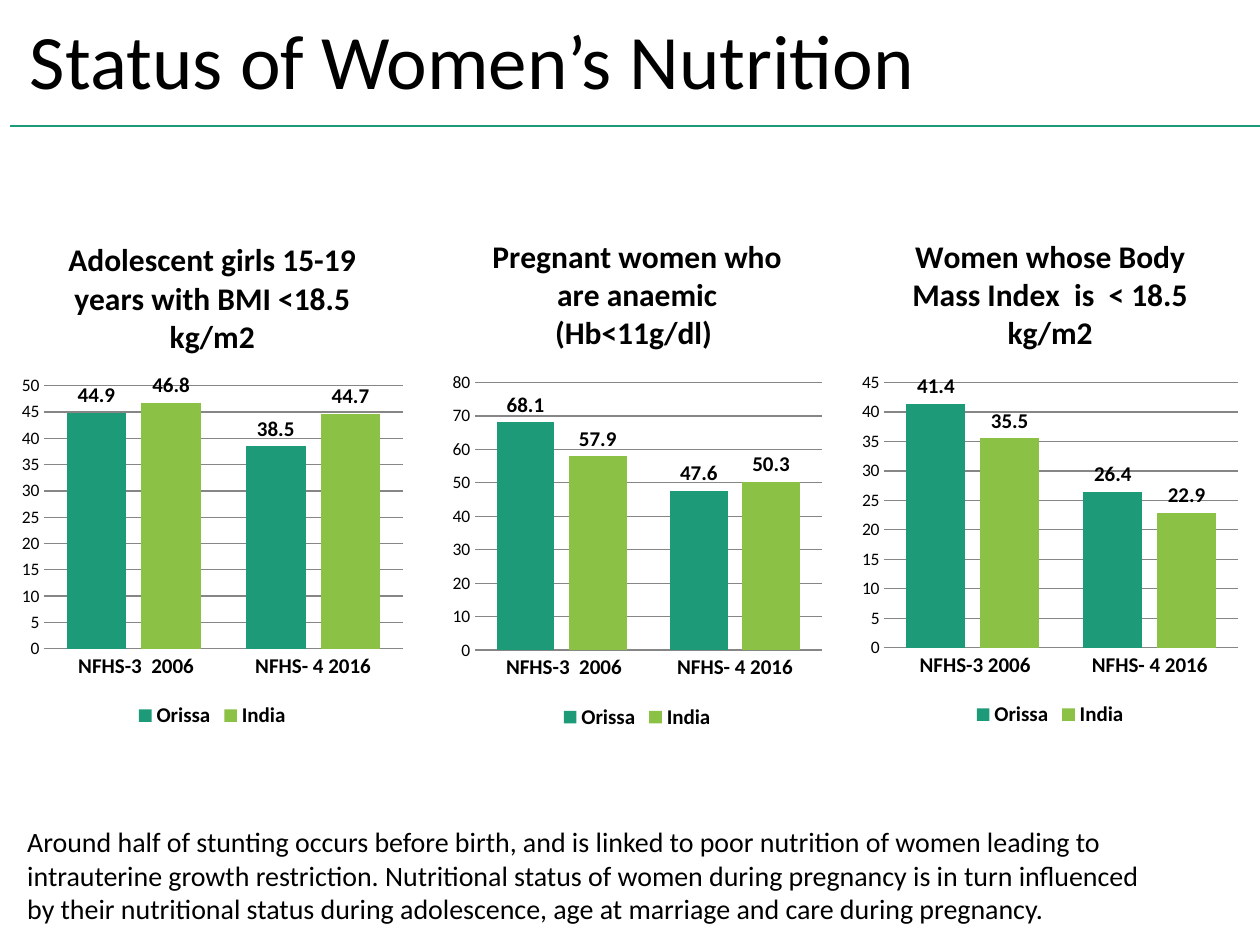
from dataclasses import dataclass

from lxml import etree
from pptx import Presentation
from pptx.chart.data import CategoryChartData
from pptx.dml.color import RGBColor
from pptx.enum.chart import (XL_CHART_TYPE, XL_LABEL_POSITION,
                             XL_LEGEND_POSITION, XL_TICK_MARK)
from pptx.enum.shapes import MSO_CONNECTOR
from pptx.enum.text import MSO_ANCHOR, MSO_AUTO_SIZE, PP_ALIGN
from pptx.oxml.ns import qn
from pptx.util import Cm, Pt

COLUMN = XL_CHART_TYPE.COLUMN_CLUSTERED
BOTTOM = XL_LEGEND_POSITION.BOTTOM
ABOVE = XL_LABEL_POSITION.OUTSIDE_END
NO_TICK = XL_TICK_MARK.NONE
STRAIGHT = MSO_CONNECTOR.STRAIGHT
MIDDLE = MSO_ANCHOR.MIDDLE
LEFT = PP_ALIGN.LEFT
NO_FIT = MSO_AUTO_SIZE.NONE
GROW = MSO_AUTO_SIZE.SHAPE_TO_FIT_TEXT
TITLE_ONLY = 5


@dataclass
class Theme:
    face: str = "Calibri"
    ink: str = "000000"
    grid: str = "868686"
    teal: str = "1D9A78"
    lime: str = "8BC145"
    title: int = 44
    head: int = 18
    body: int = 16
    label: int = 12
    tick: int = 10


def style(font, theme, size, bold=False):
    font.name = theme.face
    font.size = Pt(size)
    font.bold = bold
    font.color.rgb = RGBColor.from_string(theme.ink)


def write(frame, text, theme, size, bold=False, align=None, space=None):
    """Put one formatted paragraph into a text frame."""
    para = frame.paragraphs[0]
    para.alignment = align
    para.line_spacing = space
    run = para.add_run()
    run.text = text
    style(run.font, theme, size, bold)


class Page:
    def __init__(self, slide, theme):
        self.slide = slide
        self.theme = theme

    def title(self, text, x, y, w, h):
        shape = self.slide.shapes.title
        shape.left, shape.top, shape.width, shape.height = map(Cm, (x, y, w, h))
        frame = shape.text_frame
        frame.auto_size = NO_FIT
        frame.vertical_anchor = MIDDLE
        write(frame, text, self.theme, self.theme.title, align=LEFT, space=0.9)

    def text(self, text, x, y, w, h):
        box = self.slide.shapes.add_textbox(*map(Cm, (x, y, w, h)))
        frame = box.text_frame
        frame.word_wrap = True
        frame.auto_size = GROW
        write(frame, text, self.theme, self.theme.body)

    def rule(self, x, y, end):
        line = self.slide.shapes.add_connector(
            STRAIGHT, Cm(x), Cm(y), Cm(end), Cm(y))
        line.line.color.rgb = RGBColor.from_string(self.theme.teal)
        line.line.width = Pt(1.5)
        etree.SubElement(line._element.spPr, qn("a:effectLst"))

    def chart(self, head, cats, series, x, y, w, h):
        theme = self.theme
        data = CategoryChartData(number_format="General")
        data.categories = cats
        for name, vals in series.items():
            data.add_series(name, vals)
        chart = self.slide.shapes.add_chart(
            COLUMN, *map(Cm, (x, y, w, h)), data).chart
        style(chart.font, theme, theme.tick)

        # Heading and legend
        chart.has_title = True
        write(chart.chart_title.text_frame, head, theme, theme.head, bold=True)
        chart.chart_title.include_in_layout = False
        chart.has_legend = True
        chart.legend.position = BOTTOM
        chart.legend.include_in_layout = False
        style(chart.legend.font, theme, theme.label, bold=True)

        # Axes
        for axis in (chart.category_axis, chart.value_axis):
            axis.major_tick_mark = axis.minor_tick_mark = NO_TICK
        grey = RGBColor.from_string(theme.grid)
        chart.category_axis.format.line.color.rgb = grey
        style(chart.category_axis.tick_labels.font, theme, theme.label, bold=True)
        value = chart.value_axis
        value.minimum_scale = 0
        value.format.line.fill.background()
        value.has_major_gridlines = True
        value.major_gridlines.format.line.color.rgb = grey
        style(value.tick_labels.font, theme, theme.tick)

        # Columns
        plot = chart.plots[0]
        plot.vary_by_categories = False
        plot.gap_width = 75
        plot.overlap = -25
        for bars, color in zip(plot.series, (theme.teal, theme.lime)):
            bars.format.fill.solid()
            bars.format.fill.fore_color.rgb = RGBColor.from_string(color)
            bars.invert_if_negative = False
            labels = bars.data_labels
            labels.show_value = True
            labels.position = ABOVE
            style(labels.font, theme, theme.label, bold=True)


# Heading, first survey, Orissa, India, place
CHARTS = [
    ("Adolescent girls 15-19 years with BMI <18.5 kg/m2", " NFHS-3  2006",
     (44.9, 38.5), (46.8, 44.7), (0.28, 4.34, 8, 10.44)),
    ("Pregnant women who are anaemic (Hb<11g/dl) ", " NFHS-3  2006",
     (68.1, 47.6), (57.9, 50.3), (8.97, 4.27, 7.75, 10.54)),
    ("Women whose Body Mass Index  is  < 18.5 kg/m2", " NFHS-3 2006",
     (41.4, 26.4), (35.5, 22.9), (17.22, 4.27, 7.9, 10.49)),
]


def main():
    deck = Presentation()
    deck.slide_width, deck.slide_height = Cm(25.4), Cm(19.05)
    page = Page(deck.slides.add_slide(deck.slide_layouts[TITLE_ONLY]), Theme())

    # Title, closing text and rule
    page.title(" Status of Women’s Nutrition", 0, 0.2, 22.86, 2.2)
    page.text(
        "Around half of stunting occurs before birth, and is linked to poor "
        "nutrition of women leading to intrauterine growth restriction. "
        "Nutritional status of women during pregnancy is in turn influenced "
        "by their nutritional status during adolescence, age at marriage and "
        "care during pregnancy.", 0.3, 16.5, 23.5, 2.31)
    page.rule(0.2, 2.54, 25.4)

    # Three charts side by side
    for head, first, orissa, india, place in CHARTS:
        page.chart(head, (first, "NFHS- 4 2016"),
                   {"Orissa": orissa, "India": india}, *place)

    deck.save("out.pptx")


if __name__ == "__main__":
    main()
